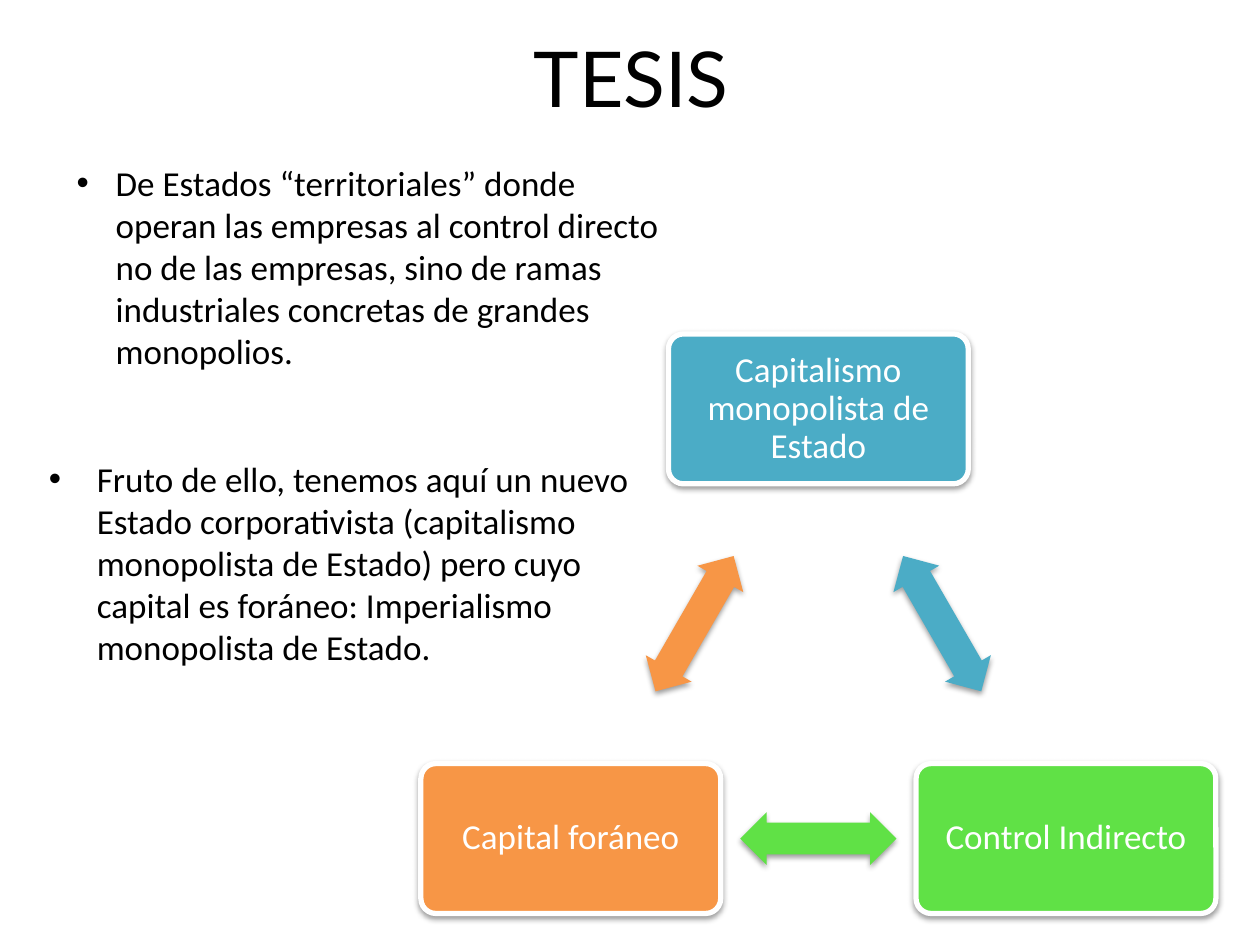
from lxml import etree
from pptx import Presentation
from pptx.dml.color import RGBColor
from pptx.enum import shapes, text
from pptx.oxml import ns
from pptx.util import Inches, Pt

HUES = {"ink": "000000", "white": "FFFFFF", "teal": "4BACC6",
        "green": "60E146", "orange": "F79646"}
TERRITORY = ("De Estados “territoriales” donde operan las empresas al control "
             "directo no de las empresas, sino de ramas industriales concretas "
             "de grandes monopolios.")
RESULT = ("Fruto de ello, tenemos aquí un nuevo Estado corporativista "
          "(capitalismo monopolista de Estado) pero cuyo capital es foráneo: "
          "Imperialismo monopolista de Estado.")
# Clockwise from the top
CYCLE = [("Capitalismo monopolista de Estado", "teal"),
         ("Control Indirecto", "green"),
         ("Capital foráneo", "orange")]


def color(name):
    return RGBColor.from_string(HUES[name])


def style(para, size, hue, face="Calibri"):
    for run in para.runs:
        run.font.size = Pt(size)
        run.font.name = face
        run.font.color.rgb = color(hue)


def shade(shape):
    """Soft shadow falling straight down."""
    shape.shadow.inherit = False
    effects = shape._element.spPr.find(ns.qn("a:effectLst"))
    drop = etree.SubElement(effects, ns.qn("a:outerShdw"), blurRad="40000",
                            dist="20000", dir="5400000", rotWithShape="0")
    tint = etree.SubElement(drop, ns.qn("a:srgbClr"), val=HUES["ink"])
    etree.SubElement(tint, ns.qn("a:alpha"), val="38000")


def add_part(group, kind, mid, size, hue):
    """A filled shape centred on mid."""
    (x, y), (w, h) = mid, size
    part = group.shapes.add_shape(kind, Inches(x - w / 2), Inches(y - h / 2),
                                  Inches(w), Inches(h))
    part.fill.solid()
    part.fill.fore_color.rgb = color(hue)
    part.line.fill.background()
    shade(part)
    return part


def add_title(slide, box, words):
    title = slide.shapes.title
    title.left, title.top, title.width, title.height = map(Inches, box)
    frame = title.text_frame
    frame.text = words
    frame.vertical_anchor = text.MSO_ANCHOR.MIDDLE
    para = frame.paragraphs[0]
    para.alignment = text.PP_ALIGN.CENTER
    style(para, 44, "ink", "Lato")


def add_bullet(slide, box, words, indent):
    frame = slide.shapes.add_textbox(*map(Inches, box)).text_frame
    frame.word_wrap = True
    frame.text = words
    para = frame.paragraphs[0]
    style(para, 20, "ink")
    props = para._p.get_or_add_pPr()
    props.set("marL", str(Inches(indent)))
    props.set("indent", str(-Inches(indent)))
    etree.SubElement(props, ns.qn("a:buFont"), typeface="Arial")
    etree.SubElement(props, ns.qn("a:buChar"), char="•")


def add_node(group, mid, size, words, hue):
    node = add_part(group, shapes.MSO_SHAPE.ROUNDED_RECTANGLE, mid, size, hue)
    node.adjustments[0] = 0.1
    node.line.color.rgb = color("white")
    node.line.width = Pt(3)
    frame = node.text_frame
    frame.word_wrap = True
    frame.vertical_anchor = text.MSO_ANCHOR.MIDDLE
    frame.margin_left = frame.margin_right = Inches(0.11)
    frame.margin_top = frame.margin_bottom = Inches(0.11)
    frame.text = words
    para = frame.paragraphs[0]
    para.alignment = text.PP_ALIGN.CENTER
    para.line_spacing = 0.9
    style(para, 20, "white")


def add_cycle(slide, box, items):
    """Three nodes on a triangle, an arrow midway along each side."""
    x, y, w, h = box
    size = nw, nh = 2.38, 1.19
    low = y + h - nh / 2
    mids = [(x + w / 2, y + nh / 2), (x + w - nw / 2, low), (x + nw / 2, low)]
    group = slide.shapes.add_group_shape()
    for i, (words, hue) in enumerate(items):
        here, after = mids[i], mids[(i + 1) % len(mids)]
        add_node(group, here, size, words, hue)
        half = [(a + b) / 2 for a, b in zip(here, after)]
        arrow = add_part(group, shapes.MSO_SHAPE.LEFT_RIGHT_ARROW, half,
                         (1.24, 0.42), hue)
        arrow.adjustments[0] = 0.6
        arrow.adjustments[1] = 0.5
        arrow.rotation = 60 + 120 * i


def main():
    deck = Presentation()
    deck.slide_width, deck.slide_height = Inches(10), Inches(7.5)
    slide = deck.slides.add_slide(deck.slide_layouts[5])
    add_title(slide, (0.51, -0.02, 9, 1.25), "TESIS")
    add_bullet(slide, (0.29, 3.58, 5.2, 3.01), RESULT, 0.38)
    add_cycle(slide, (3.34, 2.65, 6.31, 4.6), CYCLE)
    add_bullet(slide, (0.51, 1.23, 5, 1.78), TERRITORY, 0.31)
    deck.save("out.pptx")


if __name__ == "__main__":
    main()
